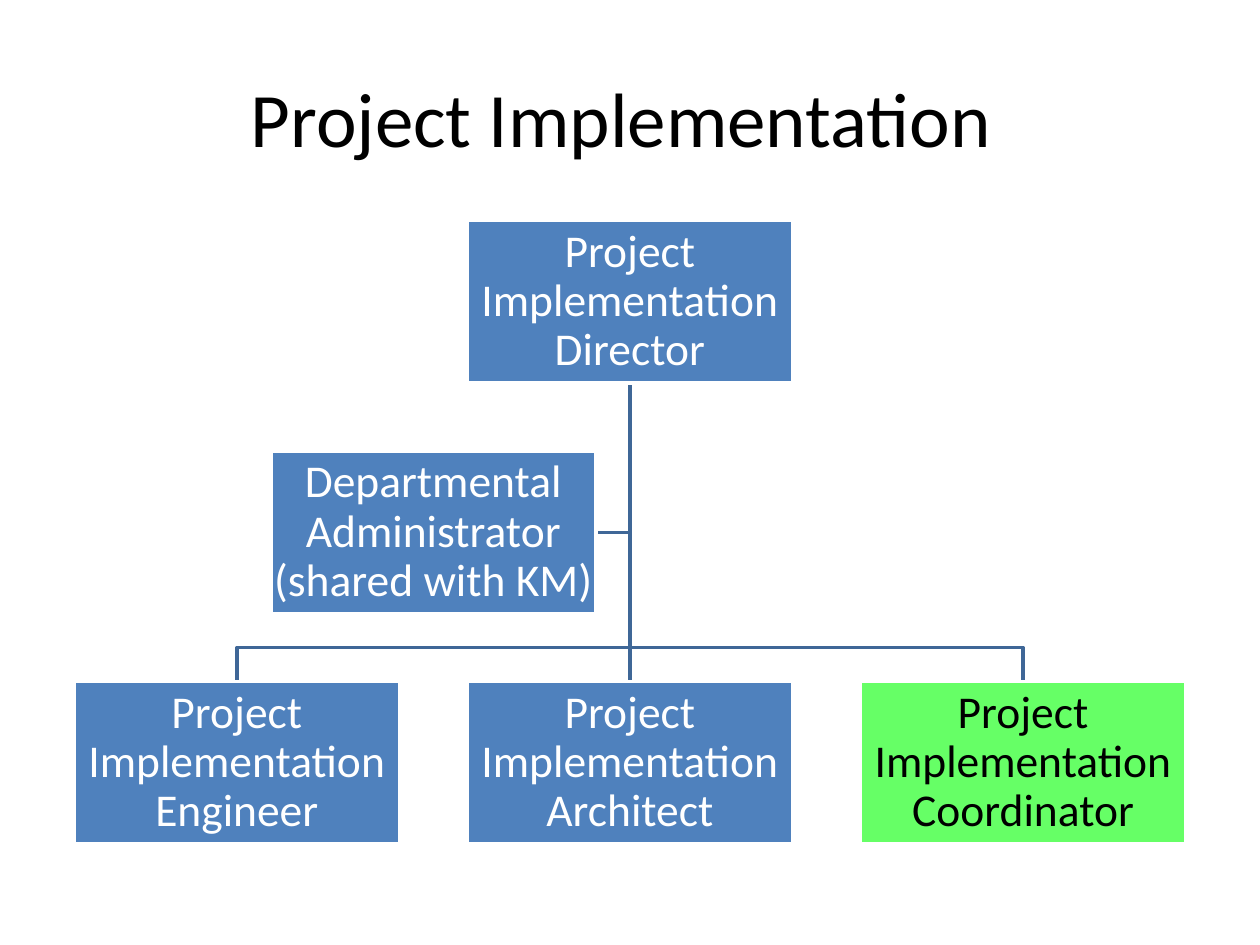
from dataclasses import dataclass

from lxml import etree
from pptx import Presentation
from pptx.dml.color import RGBColor
from pptx.enum.shapes import MSO_CONNECTOR, MSO_SHAPE
from pptx.enum.text import MSO_ANCHOR, PP_ALIGN
from pptx.oxml.ns import qn
from pptx.util import Inches, Pt

RECTANGLE = MSO_SHAPE.RECTANGLE
STRAIGHT = MSO_CONNECTOR.STRAIGHT
MIDDLE = MSO_ANCHOR.MIDDLE
CENTER = PP_ALIGN.CENTER

BLACK = RGBColor(0x00, 0x00, 0x00)
WHITE = RGBColor(0xFF, 0xFF, 0xFF)
BLUE = RGBColor(0x4F, 0x81, 0xBD)
GREEN = RGBColor(0x66, 0xFF, 0x66)
LINE_BLUE = RGBColor(0x3F, 0x67, 0x97)

BOX_WIDTH = 2.58
BOX_HEIGHT = 1.29
CENTER_X = 5.0
COLUMN_STEP = 3.12
DIRECTOR_TOP = 1.75
ASSISTANT_TOP = 3.58
TEAM_TOP = 5.41
BRANCH_Y = 5.14
DIRECTOR_BOTTOM = DIRECTOR_TOP + BOX_HEIGHT
ASSISTANT_X = CENTER_X - COLUMN_STEP / 2

BOX_MARGIN = Inches(0.02)
BOX_FRAME = {
    "margin_left": BOX_MARGIN,
    "margin_right": BOX_MARGIN,
    "margin_top": BOX_MARGIN,
    "margin_bottom": BOX_MARGIN,
}

Point = tuple[float, float]


@dataclass(frozen=True)
class Position:
    title: str
    center_x: float
    top: float
    fill: RGBColor = BLUE
    color: RGBColor = WHITE


POSITIONS = [
    Position("Project Implementation Director", CENTER_X, DIRECTOR_TOP),
    Position("Project Implementation Engineer", CENTER_X - COLUMN_STEP, TEAM_TOP),
    Position("Project Implementation Architect", CENTER_X, TEAM_TOP),
    Position("Project Implementation Coordinator", CENTER_X + COLUMN_STEP, TEAM_TOP, GREEN, BLACK),
    Position("Departmental Administrator (shared with KM)", ASSISTANT_X, ASSISTANT_TOP),
]


def set_attributes(target, values: dict) -> None:
    for name, value in values.items():
        setattr(target, name, value)


def write_text(shape, text: str, size: float, color: RGBColor, spacing: float = 1.0) -> None:
    frame = shape.text_frame
    set_attributes(frame, {"word_wrap": True, "vertical_anchor": MIDDLE})
    paragraph = frame.paragraphs[0]
    set_attributes(paragraph, {"alignment": CENTER, "line_spacing": spacing})
    run = paragraph.add_run()
    run.text = text
    set_attributes(run.font, {"name": "Calibri", "size": Pt(size)})
    run.font.color.rgb = color


def style_line(shape, color: RGBColor) -> None:
    shape.line.color.rgb = color
    shape.line.width = Pt(2)


def add_position(slide, position: Position) -> None:
    shape = slide.shapes.add_shape(
        RECTANGLE,
        Inches(position.center_x - BOX_WIDTH / 2),
        Inches(position.top),
        Inches(BOX_WIDTH),
        Inches(BOX_HEIGHT),
    )
    shape.shadow.inherit = False
    shape.fill.solid()
    shape.fill.fore_color.rgb = position.fill
    style_line(shape, WHITE)
    set_attributes(shape.text_frame, BOX_FRAME)
    write_text(shape, position.title, 26, position.color, 0.9)


def add_branch(slide, points: list[Point]) -> None:
    start, *rest = [(Inches(x), Inches(y)) for x, y in points]
    builder = slide.shapes.build_freeform(*start)
    builder.add_line_segments(rest, close=False)
    shape = builder.convert_to_shape()
    shape.shadow.inherit = False
    shape.fill.background()
    style_line(shape, LINE_BLUE)


def add_trunk(slide, start: Point, end: Point) -> None:
    connector = slide.shapes.add_connector(
        STRAIGHT, *(Inches(value) for value in (*start, *end))
    )
    style_line(connector, LINE_BLUE)
    etree.SubElement(connector._element.spPr, qn("a:effectLst"))


def main() -> None:
    presentation = Presentation()
    presentation.slide_width = Inches(10)
    presentation.slide_height = Inches(7.5)
    slide = presentation.slides.add_slide(presentation.slide_layouts[6])

    title = slide.shapes.add_textbox(Inches(0.5), Inches(0.3), Inches(9), Inches(1.25))
    write_text(title, "Project Implementation ", 44, BLACK)

    origin = (CENTER_X, DIRECTOR_BOTTOM)
    assistant_y = ASSISTANT_TOP + BOX_HEIGHT / 2
    assistant_right = ASSISTANT_X + BOX_WIDTH / 2
    add_branch(slide, [origin, (CENTER_X, assistant_y), (assistant_right, assistant_y)])
    for x in (CENTER_X + COLUMN_STEP, CENTER_X - COLUMN_STEP):
        add_branch(slide, [origin, (CENTER_X, BRANCH_Y), (x, BRANCH_Y), (x, TEAM_TOP)])
    add_trunk(slide, origin, (CENTER_X, TEAM_TOP))

    for position in POSITIONS:
        add_position(slide, position)

    presentation.save("out.pptx")


if __name__ == "__main__":
    main()
